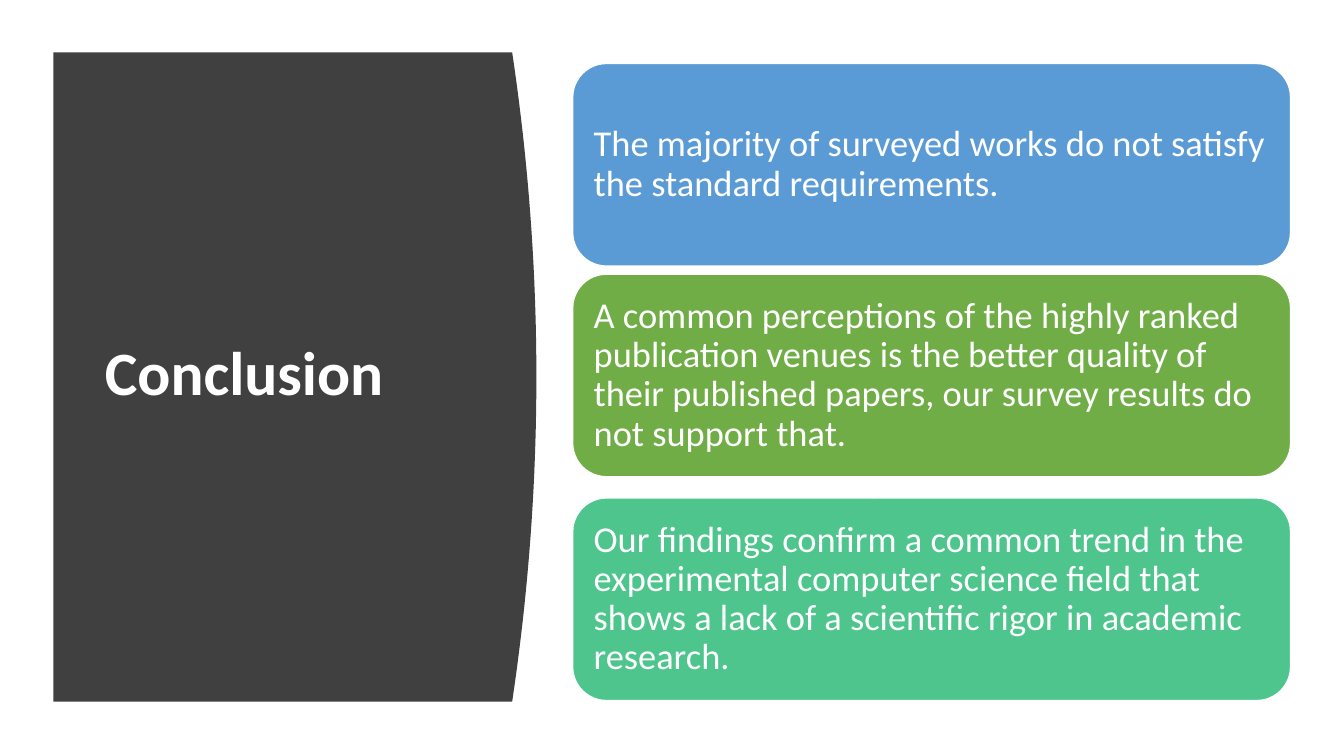
from dataclasses import dataclass

from pptx import Presentation
from pptx.dml.color import RGBColor
from pptx.enum.shapes import MSO_SHAPE
from pptx.enum.text import MSO_ANCHOR, PP_ALIGN
from pptx.util import Pt

EMU_PER_PX = 9144  # 100 px to the inch


@dataclass(frozen=True)
class Theme:
    font: str = "Calibri"
    white: str = "FFFFFF"
    charcoal: str = "404040"
    blue: str = "5B9BD5"
    green: str = "70AD47"
    teal: str = "4DC58D"
    title_size: int = 44
    finding_size: int = 26


theme = Theme()


def px(length):
    return round(length * EMU_PER_PX)


def write(shape, text, *, size, bold=False, inset=10, space_after=0):
    frame = shape.text_frame
    frame.word_wrap = True
    frame.vertical_anchor = MSO_ANCHOR.MIDDLE
    frame.margin_left = frame.margin_right = px(inset)
    frame.margin_top = frame.margin_bottom = px(inset)
    paragraph = frame.paragraphs[0]
    paragraph.alignment = PP_ALIGN.LEFT
    paragraph.line_spacing = 0.9
    paragraph.space_after = Pt(space_after)
    run = paragraph.add_run()
    run.text = text
    run.font.name = theme.font
    run.font.size = Pt(size)
    run.font.bold = bold
    run.font.color.rgb = RGBColor.from_string(theme.white)


presentation = Presentation()
presentation.slide_width, presentation.slide_height = px(1333), px(750)
slide = presentation.slides.add_slide(presentation.slide_layouts[5])

# Dark panel whose right edge bulges as a parabola
panel_left, panel_top, panel_bottom = 53, 52, 696
corner_x, bulge, steps = 508, 24, 40
right_edge = []
for step in range(steps + 1):
    t = step / steps
    right_edge.append((px(corner_x + 4 * bulge * t * (1 - t)),
                       px(panel_top + t * (panel_bottom - panel_top))))

outline = slide.shapes.build_freeform(px(panel_left), px(panel_top))
outline.add_line_segments(right_edge + [(px(panel_left), px(panel_bottom))], close=True)
panel = outline.convert_to_shape()
panel.shadow.inherit = False
panel.fill.solid()
panel.fill.fore_color.rgb = RGBColor.from_string(theme.charcoal)
panel.line.fill.background()

# Title, in front of the panel
title = slide.shapes.title
title.element.addprevious(panel.element)
title.left, title.top, title.width, title.height = px(94), px(111), px(374), px(524)
write(title, "Conclusion", size=theme.title_size, bold=True)

# Findings: top, colour, text
findings = [
    (63, theme.blue,
     "The majority of surveyed works do not satisfy the standard requirements."),
    (272, theme.green,
     "A common perceptions of the highly ranked publication venues is the better quality "
     "of their published papers, our survey results do not support that."),
    (494, theme.teal,
     "Our findings confirm a common trend in the experimental computer science field "
     "that shows a lack of a scientific rigor in academic research."),
]
for top, colour, text in findings:
    card = slide.shapes.add_shape(
        MSO_SHAPE.ROUNDED_RECTANGLE, px(568), px(top), px(712), px(201))
    card.shadow.inherit = False
    card.fill.solid()
    card.fill.fore_color.rgb = RGBColor.from_string(colour)
    card.line.color.rgb = RGBColor.from_string(theme.white)
    card.line.width = Pt(1)
    write(card, text, size=theme.finding_size, inset=11)

presentation.save("out.pptx")
